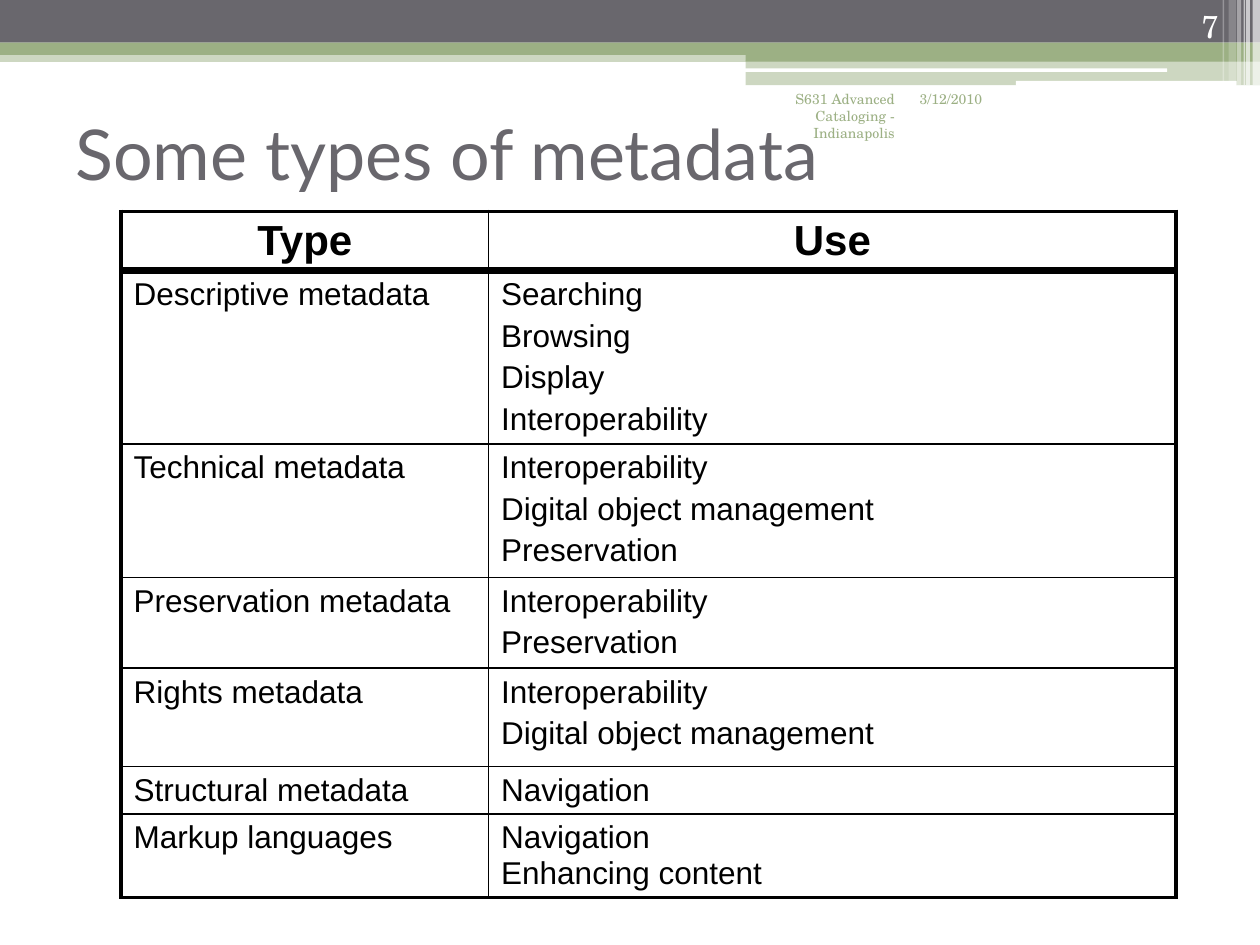
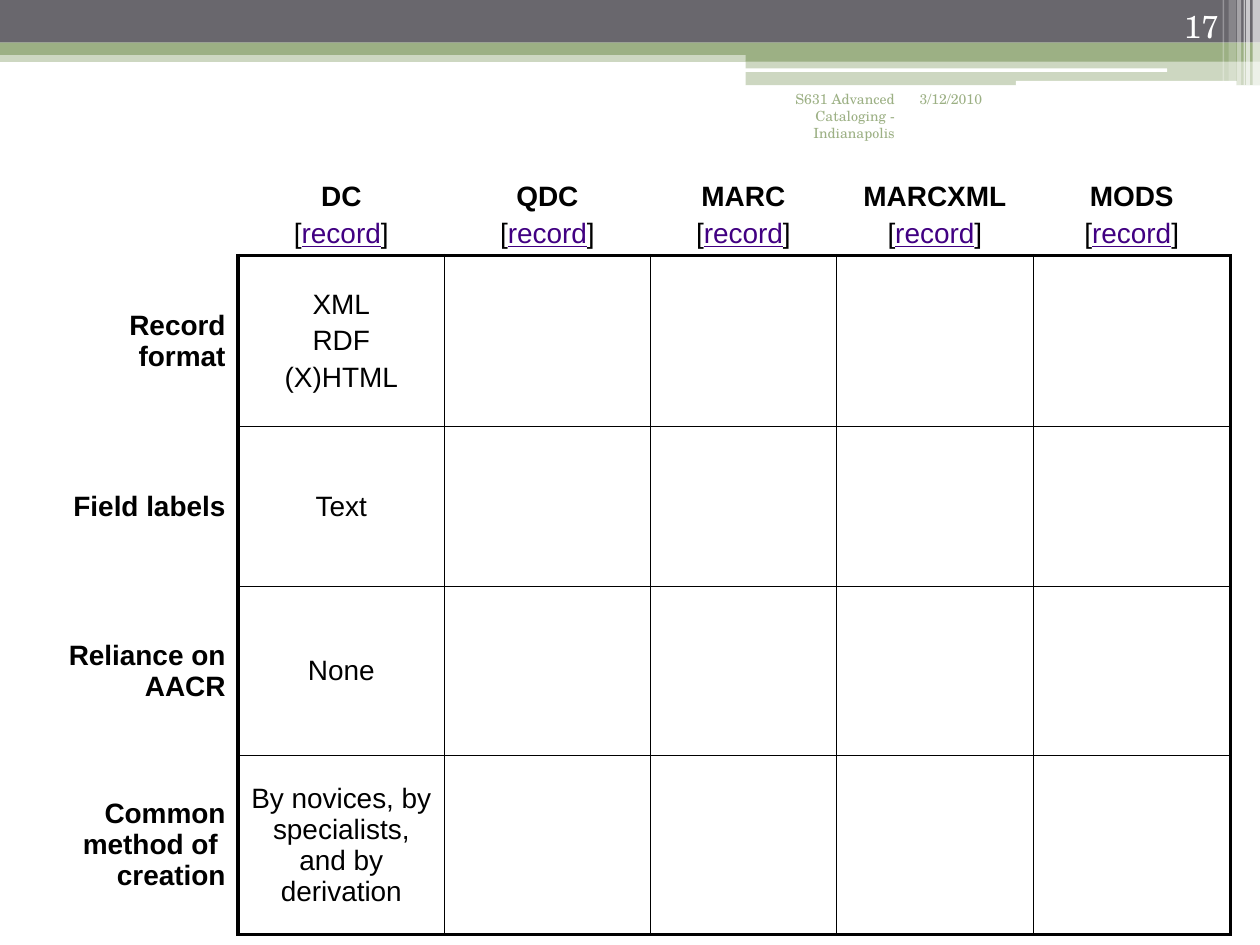
from lxml import etree
from pptx import Presentation
from pptx import util as u
from pptx.dml.color import RGBColor
from pptx.enum import shapes, text
from pptx.oxml.ns import qn

# Shared content and look
GREY, GREEN, WHITE, BLACK, LINK = "69676D", "9CB084", "FFFFFF", "000000", "410082"
TITLE_FONT, TABLE_FONT, FOOTER_FONT = "Lato", "Arial", "TeX Gyre Schola"
DATE, FOOTER = "3/12/2010", "S631 Advanced Cataloging - Indianapolis"
THIN, HEAVY = 1, 2.25
LEFT, CENTER, RIGHT = text.PP_ALIGN.LEFT, text.PP_ALIGN.CENTER, text.PP_ALIGN.RIGHT
TOP, MIDDLE, BOTTOM = text.MSO_ANCHOR.TOP, text.MSO_ANCHOR.MIDDLE, text.MSO_ANCHOR.BOTTOM
RECTANGLE = shapes.MSO_SHAPE.RECTANGLE
ROUNDED = shapes.MSO_SHAPE.ROUNDED_RECTANGLE

# Header bands: shape, (left, top, width, height) in cm, colour, opacity in percent
BANDS = [
    (RECTANGLE, (0, 1.02, 25.4, 0.23), GREEN, 50),
    (RECTANGLE, (0, 0, 25.4, 0.86), GREY, 100),
    (RECTANGLE, (0, 0.86, 25.4, 0.25), GREEN, 100),
    (RECTANGLE, (15.03, 0.99, 10.37, 0.25), GREEN, 100),
    (RECTANGLE, (15.03, 1.22, 10.37, 0.5), GREEN, 50),
    (ROUNDED, (15.01, 1.38, 8.52, 0.07), WHITE, 100),
    (ROUNDED, (20.48, 1.63, 4.45, 0.1), WHITE, 100),
]
# Pale stripes at the right end: left, width, height, opacity
STRIPES = [
    (25.25, 0.15, 1.72, 65), (25.12, 0.08, 1.72, 65), (25.07, 0.03, 1.72, 60),
    (24.94, 0.08, 1.72, 40), (24.77, 0.15, 1.63, 20), (24.65, 0.03, 1.63, 30),
]
BANDS += [(RECTANGLE, (left, 0, width, height), WHITE, opacity)
          for left, width, height, opacity in STRIPES]

# Slide content: "\n" starts a paragraph, "\v" breaks a line
TYPES_TITLE = "Some types of metadata"
TYPES = [
    ("Type", "Use"),
    ("Descriptive metadata", "Searching\nBrowsing\nDisplay\nInteroperability"),
    ("Technical metadata", "Interoperability\nDigital object management\nPreservation"),
    ("Preservation metadata", "Interoperability\nPreservation"),
    ("Rights metadata", "Interoperability\nDigital object management"),
    ("Structural metadata", "Navigation"),
    ("Markup languages", "Navigation\vEnhancing content"),
]
TYPES_COLUMNS = [7.41, 13.86]
TYPES_ROWS = [1.19, 3.49, 2.69, 1.83, 1.98, 0.96, 1.68]

FORMATS = ["DC", "QDC", "MARC", "MARCXML", "MODS"]
DC_FEATURES = [
    ("Record format", "XML\nRDF\n(X)HTML"),
    ("Field labels", "Text"),
    ("Reliance on AACR", "None"),
    ("Common method of \vcreation", "By novices, by specialists, and by derivation"),
]
COMPARISON = [[""] + FORMATS] + [
    [label, value] + [""] * (len(FORMATS) - 1) for label, value in DC_FEATURES]
COMPARISON_COLUMNS = [3.96, 4.16, 4.15, 3.75, 3.97, 3.97]
COMPARISON_ROWS = [2.61, 3.45, 3.22, 3.41, 3.61]


def color(value):
    return RGBColor.from_string(value)


def set_font(font, name, size, value, bold=False):
    font.name, font.size, font.bold = name, u.Pt(size), bold
    font.color.rgb = color(value)


def add_band(slide, kind, box, value, opacity):
    band = slide.shapes.add_shape(kind, *map(u.Cm, box))
    band.shadow.inherit = False
    band.line.fill.background()
    band.fill.solid()
    band.fill.fore_color.rgb = color(value)
    if opacity < 100:
        fill = band.fill._xPr.find(qn("a:solidFill"))
        etree.SubElement(fill[0], qn("a:alpha"), val=str(opacity * 1000))


def add_label(slide, words, box, size, value, align, anchor=TOP):
    frame = slide.shapes.add_textbox(*map(u.Cm, box)).text_frame
    frame.word_wrap = True
    frame.vertical_anchor = anchor
    frame.text = words
    paragraph = frame.paragraphs[0]
    paragraph.alignment = align
    set_font(paragraph.font, FOOTER_FONT, size, value)


def add_slide(presentation, layout):
    slide = presentation.slides.add_slide(presentation.slide_layouts[layout])
    for band in BANDS:
        add_band(slide, *band)
    return slide


def add_labels(slide, number):
    """Date, slide number and footer stand in front of the table."""
    add_label(slide, DATE, (18.29, 1.7, 2.67, 1.27), 8, GREEN, LEFT)
    add_label(slide, str(number), (22.71, 0, 2.11, 1.02), 18, WHITE, RIGHT, BOTTOM)
    add_label(slide, FOOTER, (14.61, 1.7, 3.68, 1.27), 8, GREEN, RIGHT)


def set_title(slide, words):
    title = slide.shapes.title
    title.left, title.top, title.width, title.height = map(
        u.Cm, (1.27, 1.91, 22.86, 2.34))
    frame = title.text_frame
    frame.text = words
    frame.auto_size = text.MSO_AUTO_SIZE.NONE
    frame.vertical_anchor = MIDDLE
    paragraph = frame.paragraphs[0]
    paragraph.alignment = LEFT
    set_font(paragraph.font, TITLE_FONT, 40, GREY)


def set_borders(cell, widths):
    """Widths in points for left, right, top and bottom; 0 draws no line."""
    properties = cell._tc.get_or_add_tcPr()
    for position, (side, width) in enumerate(zip("LRTB", widths)):
        line = etree.Element(qn(f"a:ln{side}"), w=str(u.Pt(width)))
        if width:
            fill = etree.SubElement(line, qn("a:solidFill"))
            etree.SubElement(fill, qn("a:srgbClr"), val=BLACK)
        else:
            etree.SubElement(line, qn("a:noFill"))
        properties.insert(position, line)


def format_paragraph(paragraph, size, bold, align, spaced):
    paragraph.alignment = align
    paragraph.space_before = u.Pt(size * 0.2 if spaced else 0)
    # Row heights follow the run fonts
    for font in [paragraph.font] + [run.font for run in paragraph.runs]:
        set_font(font, TABLE_FONT, size, BLACK, bold)


def add_table(slide, left, top, columns, rows, content, style, first=0, header_rule=THIN):
    """Grid lines start at row and column `first`, with a heavy outer frame."""
    frame = slide.shapes.add_table(len(rows), len(columns), u.Cm(left), u.Cm(top),
                                   u.Cm(sum(columns)), u.Cm(sum(rows)))
    table = frame.table
    table.first_row = table.horz_banding = False
    for column, width in zip(table.columns, columns):
        column.width = u.Cm(width)
    for row, height in zip(table.rows, rows):
        row.height = u.Cm(height)

    def rule(edge, across, last):
        if edge < first or across < first:
            return 0
        return HEAVY if edge in (first, last) else THIN

    def row_rule(edge, column):
        width = rule(edge, column, len(rows))
        return header_rule if edge == 1 and width == THIN else width

    for r, values in enumerate(content):
        for c, words in enumerate(values):
            cell = table.cell(r, c)
            cell.fill.solid()
            cell.fill.fore_color.rgb = color(WHITE)
            set_borders(cell, (rule(c, r, len(columns)), rule(c + 1, r, len(columns)),
                               row_rule(r, c), row_rule(r + 1, c)))
            size, bold, align, anchor = style(r, c)
            cell.vertical_anchor = anchor
            if anchor == TOP:
                cell.margin_bottom = 0
            cell.text = words
            for index, paragraph in enumerate(cell.text_frame.paragraphs):
                format_paragraph(paragraph, size, bold, align, index > 0)
    return table


def types_style(row, column):
    return (24, True, CENTER, MIDDLE) if row == 0 else (18, False, LEFT, TOP)


def comparison_style(row, column):
    if row == 0:
        return 16, True, CENTER, BOTTOM
    return (16, True, RIGHT, MIDDLE) if column == 0 else (16, False, CENTER, MIDDLE)


def add_record_line(cell):
    paragraph = cell.text_frame.add_paragraph()
    for words in ("[", "record", "]"):
        paragraph.add_run().text = words
    format_paragraph(paragraph, 16, False, CENTER, True)
    link = paragraph.runs[1].font
    link.underline = True
    link.color.rgb = color(LINK)


def main():
    presentation = Presentation()
    presentation.slide_width, presentation.slide_height = u.Cm(25.4), u.Cm(19.05)

    # Types of metadata
    slide = add_slide(presentation, 5)
    set_title(slide, TYPES_TITLE)
    add_table(slide, 2.44, 4.26, TYPES_COLUMNS, TYPES_ROWS, TYPES, types_style,
              header_rule=4.5)
    add_labels(slide, 7)

    # Comparison of record formats
    slide = add_slide(presentation, 6)
    table = add_table(slide, 0.84, 2.54, COMPARISON_COLUMNS, COMPARISON_ROWS,
                      COMPARISON, comparison_style, first=1)
    for column in range(1, len(FORMATS) + 1):
        add_record_line(table.cell(0, column))
    add_labels(slide, 17)

    presentation.save("out.pptx")


if __name__ == "__main__":
    main()
